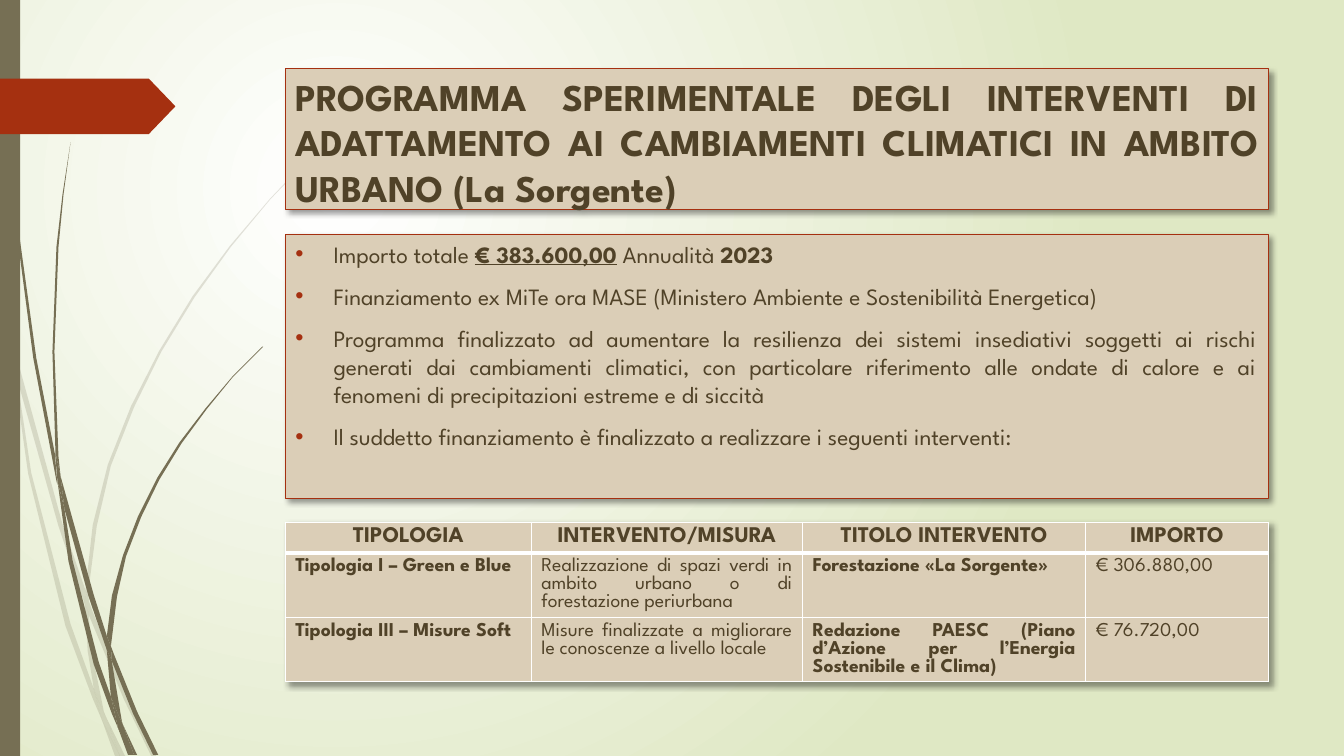
import lxml.etree
import pptx
import pptx.dml.color
import pptx.enum.shapes
import pptx.enum.text
import pptx.oxml.ns
import pptx.util

Inches, Pt = pptx.util.Inches, pptx.util.Pt
ALIGN = pptx.enum.text.PP_ALIGN
SHAPE = pptx.enum.shapes.MSO_SHAPE
qn = pptx.oxml.ns.qn

COLORS = {"panel": "DBCEB7", "text": "504228", "accent": "A53010",
          "olive": "766F54", "white": "FFFFFF", "green": "DFE8C4", "black": "000000"}
FONT = "League Spartan"
LEFT, WIDTH = 2.83, 9.75

TITLE = ("PROGRAMMA SPERIMENTALE DEGLI INTERVENTI DI ADATTAMENTO AI "
         "CAMBIAMENTI CLIMATICI IN AMBITO URBANO (La Sorgente)")
BULLETS = [
    [("Importo totale ", False, False), ("€ 383.600,00", True, True),
     (" Annualità ", False, False), ("2023", True, False)],
    [("Finanziamento ex MiTe ora MASE (Ministero Ambiente e Sostenibilità Energetica)",
      False, False)],
    [("Programma finalizzato ad aumentare la resilienza dei sistemi insediativi soggetti "
      "ai rischi generati dai cambiamenti climatici, con particolare riferimento alle "
      "ondate di calore e ai fenomeni di precipitazioni estreme e di siccità", False, False)],
    [("Il suddetto finanziamento è finalizzato a realizzare i seguenti interventi:",
      False, False)],
]
TABLE = [
    ["TIPOLOGIA", "INTERVENTO/MISURA", "TITOLO INTERVENTO", "IMPORTO"],
    ["Tipologia I – Green e Blue",
     "Realizzazione di spazi verdi in ambito urbano o di forestazione periurbana",
     "Forestazione «La Sorgente»", "€ 306.880,00"],
    ["Tipologia III – Misure Soft",
     "Misure finalizzate a migliorare le conoscenze a livello locale",
     "Redazione PAESC (Piano d’Azione per l’Energia Sostenibile e il Clima)", "€ 76.720,00"],
]
FAINT_BLADES = [
    [(0.11, 3.5), (0.09, 3.22), (0, 2.82), (0, 2.99), (0.1, 3.44)],
    [(0.58, 5.22), (0.84, 5.99), (0.85, 5.86), (0.62, 5.2), (0.14, 3.45), (0.17, 3.76)],
    [(0.92, 6.07), (0.88, 5.96), (0.88, 6.1), (1.23, 6.94), (1.5, 7.5), (1.55, 7.5),
     (1.27, 6.92)],
    [(1.19, 7.5), (1.24, 7.5), (1.05, 7.11)],
    [(0.93, 6.83), (0.7, 6.19), (0.31, 4.69), (0.17, 3.76), (0.11, 3.5), (0.28, 4.7),
     (0.65, 6.21), (0.92, 6.93), (1.01, 7.14), (0.99, 7.07)],
    [(0.84, 5.99), (0.87, 6.46), (0.93, 6.83), (0.96, 6.92), (1.05, 7.11), (1.03, 7.06),
     (0.91, 6.46), (0.88, 6.1), (0.88, 6.08)],
    [(0.88, 5.84), (0.96, 5.22), (1.1, 4.62), (1.33, 4.04), (1.6, 3.49), (1.93, 2.95),
     (2.29, 2.45), (2.68, 1.98), (2.9, 1.75), (3.12, 1.54), (3.12, 1.53), (2.89, 1.75),
     (2.68, 1.97), (2.28, 2.44), (1.91, 2.94), (1.58, 3.48), (1.3, 4.03), (1.07, 4.61),
     (0.92, 5.21), (0.85, 5.84), (0.85, 5.86), (0.88, 5.96)],
    [(1.01, 7.14), (1.14, 7.5), (1.19, 7.5)],
    [(0.88, 6.08), (0.88, 6.1), (0.88, 5.96), (0.85, 5.86), (0.84, 5.99)],
    [(0.96, 6.92), (0.93, 6.83), (0.99, 7.07), (1.01, 7.14), (1.19, 7.5), (1.05, 7.11)],
]
DARK_BLADES = [
    [(0.07, 1.1), (0.17, 2.33), (0.33, 3.55), (0.56, 4.77), (0.57, 4.81), (0.55, 4.57),
     (0.55, 4.53), (0.36, 3.55), (0.19, 2.32), (0.08, 1.09), (0.05, 0.48), (0.04, 0),
     (0.03, 0), (0.04, 0.48)],
    [(0.88, 5.92), (1.06, 6.45), (1.06, 6.33), (1.06, 6.31), (0.93, 5.9), (0.6, 4.72),
     (0.64, 5.05)],
    [(1.13, 6.49), (1.1, 6.41), (1.11, 6.56), (1.32, 7.08), (1.52, 7.49), (1.57, 7.49),
     (1.36, 7.06)],
    [(1.1, 6.91), (0.98, 6.57), (0.72, 5.56), (0.64, 5.05), (0.57, 4.77), (0.68, 5.57),
     (0.93, 6.59), (1.11, 7.08), (1.17, 7.22), (1.16, 7.17)],
    [(0.6, 4.72), (0.58, 4.53), (0.54, 3.49), (0.58, 2.45), (0.63, 1.93), (0.7, 1.41),
     (0.62, 1.93), (0.56, 2.45), (0.52, 3.49), (0.55, 4.49)],
    [(1.33, 7.49), (1.36, 7.49), (1.22, 7.19)],
    [(0.57, 4.77), (0.64, 5.05), (0.6, 4.72), (0.55, 4.49), (0.55, 4.53)],
    [(1.11, 6.33), (1.16, 5.92), (1.25, 5.52), (1.4, 5.13), (1.58, 4.76), (1.8, 4.4),
     (2.05, 4.06), (2.31, 3.74), (2.61, 3.44), (2.6, 3.44), (2.31, 3.73), (2.04, 4.05),
     (1.78, 4.39), (1.56, 4.74), (1.37, 5.12), (1.22, 5.51), (1.11, 5.91), (1.06, 6.31),
     (1.1, 6.41)],
    [(1.17, 7.22), (1.27, 7.49), (1.31, 7.49)],
    [(1.06, 6.45), (1.1, 6.91), (1.16, 7.06), (1.22, 7.19), (1.21, 7.16), (1.11, 6.56),
     (1.09, 6.51)],
    [(1.06, 6.45), (1.09, 6.51), (1.11, 6.56), (1.1, 6.41), (1.06, 6.31)],
    [(1.16, 7.06), (1.1, 6.91), (1.16, 7.17), (1.17, 7.22), (1.3, 7.49), (1.33, 7.49),
     (1.22, 7.19)],
]


def rgb(name):
    return pptx.dml.color.RGBColor.from_string(COLORS[name])


def sub(parent, tag, **attrs):
    return lxml.etree.SubElement(parent, qn(tag), {k: str(v) for k, v in attrs.items()})


def add_shadow(parent):
    effects = sub(parent, "a:effectLst")
    outer = sub(effects, "a:outerShdw", blurRad=Pt(4), dist=Pt(3), dir=45 * 60000,
                algn="tl", rotWithShape=0)
    sub(sub(outer, "a:srgbClr", val=COLORS["black"]), "a:alpha", val=40000)
    return effects


def style_font(font, size, bold=None):
    font.name, font.size, font.bold = FONT, Pt(size), bold
    font.color.rgb = rgb("text")


def fill_plain(sp, color):
    sp.shadow.inherit = False
    sp.fill.solid()
    sp.fill.fore_color.rgb = rgb(color)
    sp.line.fill.background()


def format_panel(sp, left, top, width, height):
    sp.left, sp.top, sp.width, sp.height = map(Inches, (left, top, width, height))
    sp.fill.solid()
    sp.fill.fore_color.rgb = rgb("panel")
    sp.line.color.rgb = rgb("accent")
    sp.line.width = Pt(0.75)
    add_shadow(sp._element.spPr)
    tf = sp.text_frame
    tf.word_wrap = True
    tf.auto_size = pptx.enum.text.MSO_AUTO_SIZE.NONE
    tf.vertical_anchor = pptx.enum.text.MSO_ANCHOR.TOP
    return tf


def add_blade(s, outline, opacity):
    points = [(Inches(x), Inches(y)) for x, y in outline]
    builder = s.shapes.build_freeform(*points[0])
    builder.add_line_segments(points[1:], close=True)
    sp = builder.convert_to_shape()
    fill_plain(sp, "olive")
    if opacity < 100:
        sub(sp._element.spPr.find(".//" + qn("a:srgbClr")), "a:alpha", val=opacity * 1000)


def add_background(s):
    fill = s.background.fill
    fill.gradient()
    for stop, color in zip(fill.gradient_stops, ("white", "green")):
        stop.color.rgb = rgb(color)
    lin = s._element.find(".//" + qn("a:lin"))
    grad = lin.getparent()
    grad.remove(lin)
    sub(sub(grad, "a:path", path="circle"), "a:fillToRect",
        l=50000, t=50000, r=100000, b=100000)


def add_decoration(s, height):
    for blades, opacity in ((FAINT_BLADES, 20), (DARK_BLADES, 100)):
        for outline in blades:
            add_blade(s, outline, opacity)
    bar = s.shapes.add_shape(SHAPE.RECTANGLE, 0, 0, Inches(0.2), Inches(height))
    fill_plain(bar, "olive")
    tag = s.shapes.add_shape(SHAPE.PENTAGON, 0, Inches(0.78), Inches(1.74), Inches(0.55))
    tag.adjustments[0] = 0.48
    fill_plain(tag, "accent")


def add_title(s, left, top, width, height):
    p = format_panel(s.shapes.title, left, top, width, height).paragraphs[0]
    p.text = TITLE
    p.alignment, p.line_spacing = ALIGN.JUSTIFY, 1.0
    style_font(p.font, 27, True)


def add_bullets(s, left, top, width, height):
    tf = format_panel(s.shapes.add_textbox(0, 0, 0, 0), left, top, width, height)
    tf.margin_right = Inches(0.12)
    for i, runs in enumerate(BULLETS):
        p = tf.add_paragraph() if i else tf.paragraphs[0]
        p.alignment, p.line_spacing, p.space_before = ALIGN.JUSTIFY, 1.0, Pt(10)
        pPr = p._p.get_or_add_pPr()
        pPr.set("marL", str(Inches(0.38)))
        pPr.set("indent", str(-Inches(0.38)))
        sub(sub(pPr, "a:buClr"), "a:srgbClr", val=COLORS["accent"])
        sub(pPr, "a:buFont", typeface="Arial")
        sub(pPr, "a:buChar", char="•")
        for text, bold, underline in runs:
            r = p.add_run()
            r.text = text
            style_font(r.font, 16.7, bold)
            r.font.underline = underline


def add_borders(cell, row):
    tcPr = cell._tc.get_or_add_tcPr()
    thick = {0: "a:lnB", 1: "a:lnT"}.get(row)
    for tag in ("a:lnL", "a:lnR", "a:lnT", "a:lnB"):
        ln = sub(tcPr, tag, w=Pt(3 if tag == thick else 1))
        sub(sub(ln, "a:solidFill"), "a:srgbClr", val=COLORS["white"])


def add_measures_table(s, left, top, width):
    heights, widths = (0.3, 0.64, 0.64), (2.44, 2.69, 2.81, 1.81)
    tbl = s.shapes.add_table(len(TABLE), len(widths), Inches(left), Inches(top),
                             Inches(width), Inches(sum(heights))).table
    tbl.first_row = tbl.horz_banding = False
    tblPr = tbl._tbl.tblPr
    tblPr.insert(0, add_shadow(tblPr))
    for col, w in zip(tbl.columns, widths):
        col.width = Inches(w)
    for i, (row, h) in enumerate(zip(tbl.rows, heights)):
        row.height = Inches(h)
        for j, cell in enumerate(row.cells):
            add_borders(cell, i)
            cell.fill.solid()
            cell.fill.fore_color.rgb = rgb("panel")
            p = cell.text_frame.paragraphs[0]
            p.text = TABLE[i][j]
            p.alignment = ALIGN.JUSTIFY if i else ALIGN.CENTER
            style_font(p.font, 14 if i else 16, i == 0 or j in (0, 2))


prs = pptx.Presentation()
prs.slide_width, prs.slide_height = Inches(13.33), Inches(7.5)
s = prs.slides.add_slide(prs.slide_layouts[5])
add_background(s)
add_decoration(s, 7.5)
s.shapes._spTree.append(s.shapes.title._element)
add_title(s, LEFT, 0.68, WIDTH, 1.4)
add_bullets(s, LEFT, 2.33, WIDTH, 2.62)
add_measures_table(s, LEFT, 5.18, WIDTH)
prs.save("out.pptx")
